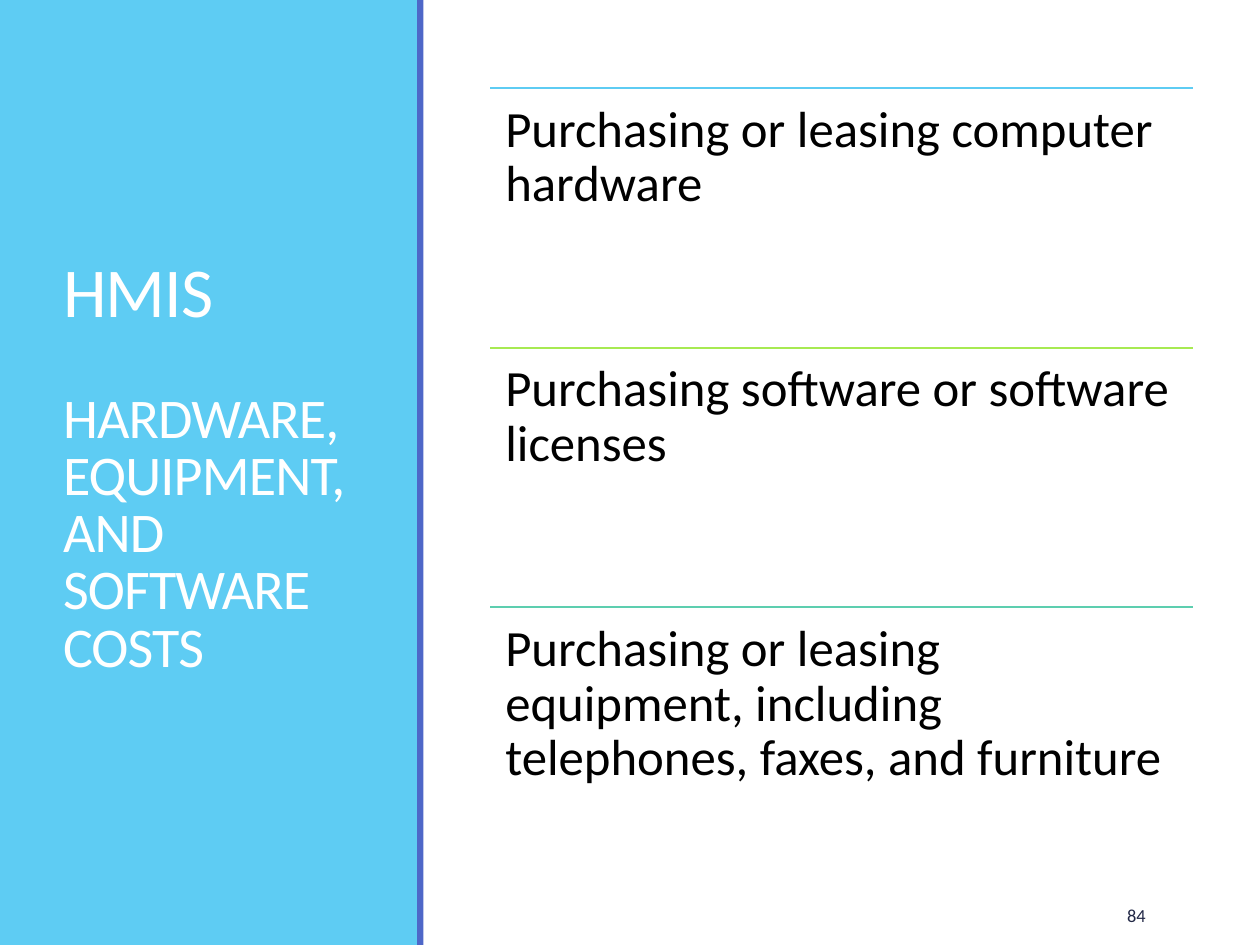
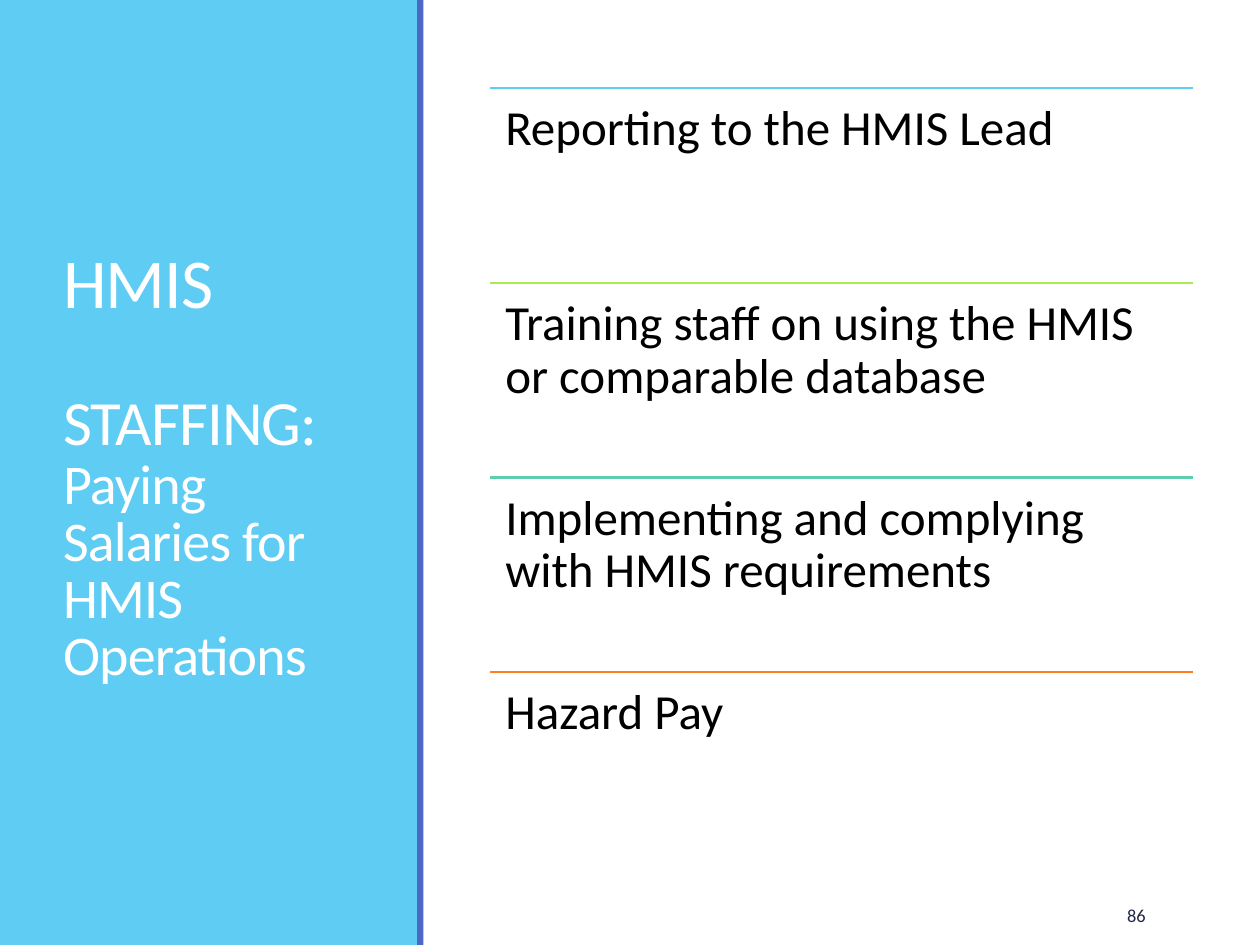
from pptx import Presentation
from pptx.dml.color import RGBColor
from pptx.enum.shapes import MSO_CONNECTOR, MSO_SHAPE
from pptx.enum.text import MSO_ANCHOR, MSO_AUTO_SIZE, PP_ALIGN
from pptx.oxml.ns import qn
from pptx.util import Inches, Pt
from lxml import etree

RECTANGLE = MSO_SHAPE.RECTANGLE
STRAIGHT = MSO_CONNECTOR.STRAIGHT
TOP, MIDDLE = MSO_ANCHOR.TOP, MSO_ANCHOR.MIDDLE
LEFT, RIGHT = PP_ALIGN.LEFT, PP_ALIGN.RIGHT
NO_AUTOFIT = MSO_AUTO_SIZE.NONE

# Content: title lines are (text, size, space before in points)
SLIDES = [
    {
        "number": "84",
        "title": [
            ("HMIS", 40, 0),
            ("HARDWARE, EQUIPMENT, AND SOFTWARE COSTS", 32, 35),
        ],
        "item_size": 29,
        "items": [
            "Purchasing or leasing computer hardware",
            "Purchasing software or software licenses",
            "Purchasing or leasing equipment, including telephones, faxes, and furniture",
        ],
    },
    {
        "number": "86",
        "title": [
            ("HMIS", 40, 0),
            ("STAFFING:", 36, 41),
            ("Paying Salaries for HMIS Operations", 32, 0),
        ],
        "item_size": 28,
        "items": [
            "Reporting to the HMIS Lead",
            "Training staff on using the HMIS or comparable database",
            "Implementing and complying with HMIS requirements",
            "Hazard Pay",
        ],
    },
]

# Theme and layout, lengths in inches
THEME = {
    "font": "Calibri",
    "panel": "5ECCF3",
    "stripe": "4E67C8",
    "title": "FFFFFF",
    "item": "000000",
    "number": "212745",
    "rules": ["5ECCF3", "A7EA52", "5DCEAF", "FF8021"],
    "rule_width": 1.25,
    "number_size": 10.5,
    "title_tracking": -50,
}
PANEL = (0, 0, 3.32, 7.5)
STRIPE = (3.31, 0, 0.05, 7.5)
TITLE = (0.4, 0.57, 2.53, 6.31)
NUMBER = (8.3, 7.06, 0.89, 0.4)
LIST = (3.89, 0.7, 5.58, 6.18)
ITEM_INSET = 0.12


def color(name):
    return RGBColor.from_string(name)


def place(shape, area):
    for side, length in zip(("left", "top", "width", "height"), area):
        setattr(shape, side, Inches(length))


def set_frame(shape, anchor, inset=None):
    frame = shape.text_frame
    formats = {"word_wrap": True, "auto_size": NO_AUTOFIT, "vertical_anchor": anchor}
    if inset is not None:
        for side in ("left", "right", "top", "bottom"):
            formats["margin_" + side] = Inches(inset)
    for name, value in formats.items():
        setattr(frame, name, value)
    return frame


def write(para, text, size, ink, **formats):
    for name, value in formats.items():
        setattr(para, name, value)
    span = para.add_run()
    span.text = text
    for name, value in {"name": THEME["font"], "size": Pt(size), "bold": False}.items():
        setattr(span.font, name, value)
    span.font.color.rgb = color(ink)
    return span


def add_band(page, area, fill):
    band = page.shapes.add_shape(RECTANGLE, *map(Inches, area))
    band.shadow.inherit = False
    band.fill.solid()
    band.fill.fore_color.rgb = color(fill)
    band.line.fill.background()
    return band


def add_title(page, lines):
    title = page.shapes.title
    # The panel goes behind the title
    title._element.addprevious(add_band(page, PANEL, THEME["panel"])._element)
    add_band(page, STRIPE, THEME["stripe"])
    place(title, TITLE)
    frame = set_frame(title, MIDDLE)
    for index, (text, size, gap) in enumerate(lines):
        para = frame.add_paragraph() if index else frame.paragraphs[0]
        span = write(para, text, size, THEME["title"], alignment=LEFT,
                     line_spacing=0.85, space_before=Pt(gap))
        span.font._element.set("spc", str(THEME["title_tracking"]))


def add_number(page, number):
    box = page.shapes.add_textbox(*map(Inches, NUMBER))
    frame = set_frame(box, MIDDLE)
    write(frame.paragraphs[0], number, THEME["number_size"], THEME["number"], alignment=RIGHT)


def add_rule(page, left, top, width, ink):
    rule = page.shapes.add_connector(
        STRAIGHT, Inches(left), Inches(top), Inches(left + width), Inches(top))
    rule.line.color.rgb = color(ink)
    rule.line.width = Pt(THEME["rule_width"])
    etree.SubElement(rule._element.spPr, qn("a:effectLst"))


def add_items(page, items, size):
    left, first_top, width, height = LIST
    pitch = height / len(items)
    for index, (text, ink) in enumerate(zip(items, THEME["rules"])):
        top = first_top + index * pitch
        add_rule(page, left, top, width, ink)
        box = page.shapes.add_textbox(*map(Inches, (left, top, width, pitch)))
        frame = set_frame(box, TOP, ITEM_INSET)
        write(frame.paragraphs[0], text, size, THEME["item"], line_spacing=0.9)


def main():
    deck = Presentation()
    deck.slide_width, deck.slide_height = Inches(10), Inches(7.5)
    title_only = deck.slide_layouts[5]
    for content in SLIDES:
        page = deck.slides.add_slide(title_only)
        add_title(page, content["title"])
        add_number(page, content["number"])
        add_items(page, content["items"], content["item_size"])
    deck.save("out.pptx")


if __name__ == "__main__":
    main()
